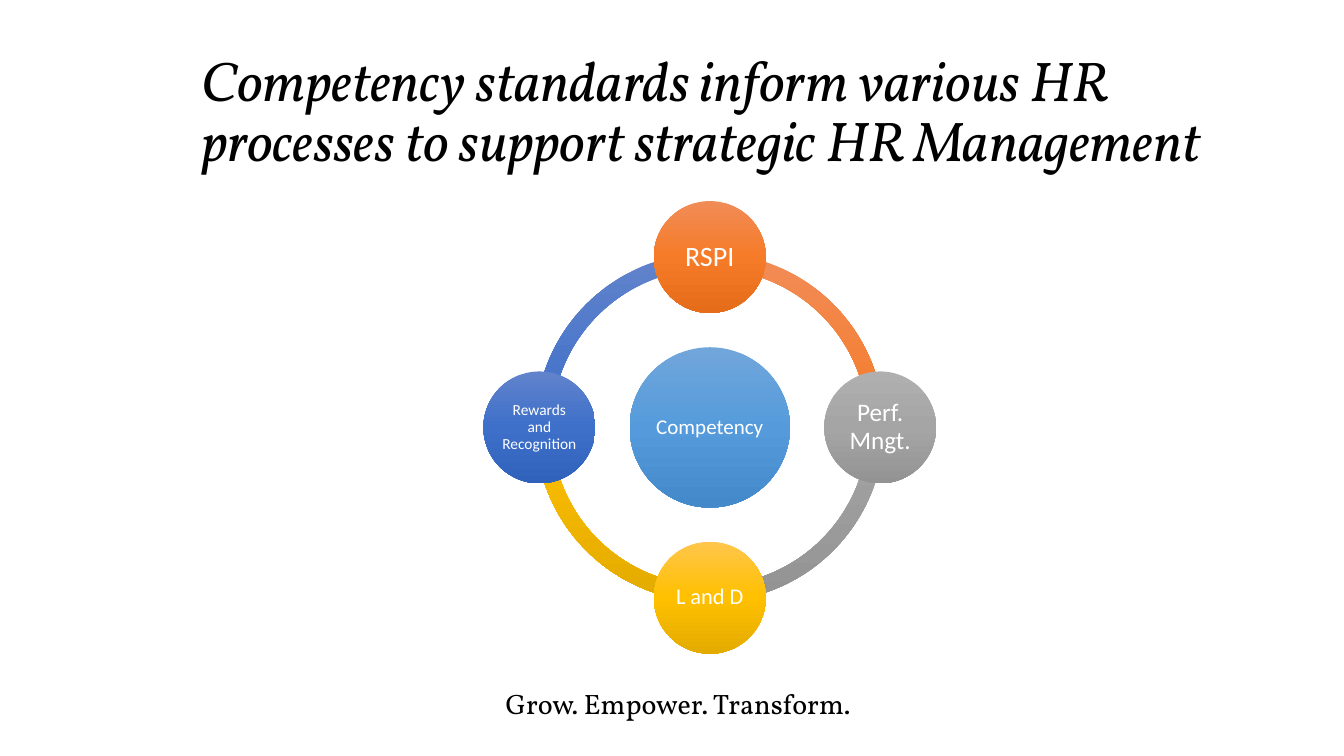
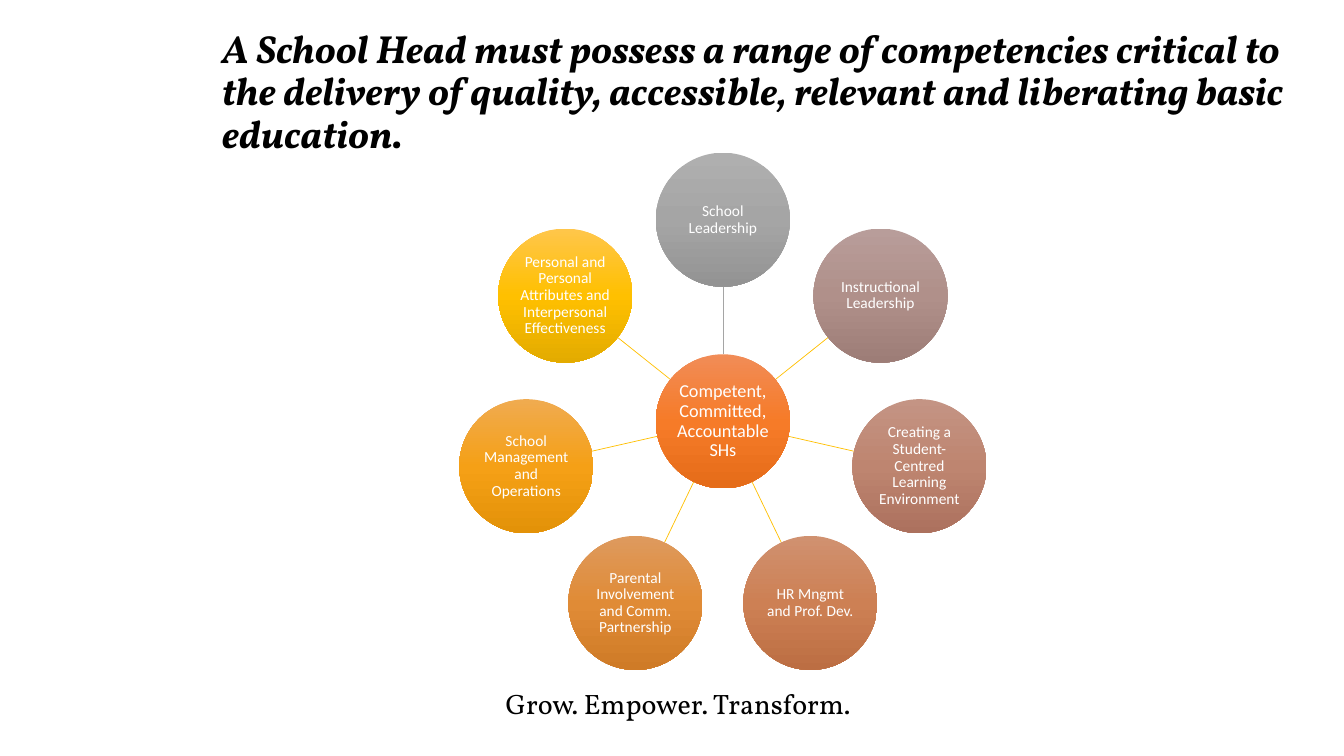
"""Build two slides on competency standards for HR processes and school heads."""
from copy import deepcopy
from dataclasses import dataclass
from math import cos, pi, sin

from pptx import Presentation
from pptx.dml.color import RGBColor
from pptx.enum.shapes import MSO_CONNECTOR, MSO_SHAPE
from pptx.enum.text import MSO_ANCHOR, MSO_AUTO_SIZE, PP_ALIGN
from pptx.oxml.ns import qn
from pptx.oxml.xmlchemy import OxmlElement
from pptx.util import Inches, Pt

OVAL, BLOCK_ARC = MSO_SHAPE.OVAL, MSO_SHAPE.BLOCK_ARC
STRAIGHT = MSO_CONNECTOR.STRAIGHT
LEFT, CENTER = PP_ALIGN.LEFT, PP_ALIGN.CENTER
MIDDLE = MSO_ANCHOR.MIDDLE
NO_AUTOFIT = MSO_AUTO_SIZE.NONE

TITLE_FONT, BODY_FONT = "Vollkorn", "Calibri"
BLACK = RGBColor(0x00, 0x00, 0x00)
WHITE = RGBColor(0xFF, 0xFF, 0xFF)
GREY_LINE = RGBColor(0xA5, 0xA5, 0xA5)
GOLD_LINE = RGBColor(0xFF, 0xC0, 0x00)

Shades = tuple[RGBColor, RGBColor, RGBColor]
LIGHT_BLUE = (RGBColor(0x71, 0xA6, 0xDB), RGBColor(0x55, 0x9B, 0xDB), RGBColor(0x44, 0x8A, 0xCA))
BLUE = (RGBColor(0x61, 0x83, 0xCB), RGBColor(0x3E, 0x70, 0xCA), RGBColor(0x30, 0x62, 0xBB))
ORANGE = (RGBColor(0xF1, 0x8C, 0x57), RGBColor(0xF6, 0x7B, 0x28), RGBColor(0xE5, 0x6C, 0x19))
GREY = (RGBColor(0xAF, 0xAF, 0xAF), RGBColor(0xA5, 0xA5, 0xA5), RGBColor(0x93, 0x93, 0x93))
GOLD = (RGBColor(0xFF, 0xC6, 0x4B), RGBColor(0xFF, 0xC0, 0x00), RGBColor(0xE3, 0xAB, 0x00))
MAUVE = (RGBColor(0xB8, 0x9D, 0x9A), RGBColor(0xB0, 0x90, 0x8A), RGBColor(0x9D, 0x7D, 0x77))
ROSE = (RGBColor(0xC4, 0x94, 0x84), RGBColor(0xBE, 0x85, 0x70), RGBColor(0xAC, 0x71, 0x5E))
COPPER = (RGBColor(0xD0, 0x91, 0x70), RGBColor(0xCD, 0x80, 0x54), RGBColor(0xBC, 0x6E, 0x43))
OCHRE = (RGBColor(0xDE, 0x9A, 0x5E), RGBColor(0xE0, 0x8B, 0x36), RGBColor(0xCF, 0x7B, 0x27))
AMBER = (RGBColor(0xF0, 0xAB, 0x50), RGBColor(0xF5, 0xA0, 0x16), RGBColor(0xE3, 0x92, 0x08))


@dataclass(frozen=True)
class Node:
    """A labelled circle."""
    text: str
    shades: Shades
    size: float = 11


@dataclass(frozen=True)
class Wheel:
    """Circles spaced evenly around a hub, clockwise from the top."""
    x: float
    y: float
    radius: float
    hub: Node
    hub_diameter: float
    nodes: tuple[Node, ...]
    node_diameter: float
    inset: float

    def point(self, index: int, distance: float) -> tuple[float, float]:
        """Return the point at a distance from the hub towards a node."""
        angle = 2 * pi * index / len(self.nodes)
        return self.x + distance * sin(angle), self.y - distance * cos(angle)


HR_WHEEL = Wheel(7.04, 4.24, 1.69, Node("Competency", LIGHT_BLUE, 15), 1.59, (
    Node("RSPI", ORANGE, 20),
    Node("Perf. Mngt.", GREY, 18),
    Node("L and D", GOLD, 16),
    Node("Rewards and Recognition", BLUE),
), 1.11, 0.02)
RING_DIAMETER, RING_THICKNESS = 3.46, 0.046

SCHOOL_WHEEL = Wheel(
    7.17, 4.18, 2, Node("Competent, Committed, Accountable SHs", ORANGE, 13), 1.33, (
        Node("School Leadership", GREY),
        Node("Instructional Leadership", MAUVE),
        Node("Creating a Student- Centred Learning Environment", ROSE),
        Node("HR Mngmt and Prof. Dev.", COPPER),
        Node("Parental Involvement and Comm. Partnership", OCHRE),
        Node("School Management and Operations", AMBER),
        Node("Personal and Personal Attributes and Interpersonal Effectiveness", GOLD),
    ), 1.33, 0.01)


def add_round(slide, kind, x: float, y: float, diameter: float, shades: Shades):
    """Add a round shape centred on a point, shaded from top to bottom."""
    sp = slide.shapes.add_shape(kind, Inches(x - diameter / 2), Inches(y - diameter / 2),
                                Inches(diameter), Inches(diameter))
    sp.shadow.inherit = False
    sp.line.fill.background()
    sp.fill.gradient()
    sp.fill.gradient_angle = 270
    stops = sp._element.spPr.find(".//" + qn("a:gsLst"))
    stops.append(deepcopy(stops[-1]))
    for stop, color, position in zip(sp.fill.gradient_stops, shades, (0, 0.5, 1)):
        stop.color.rgb = color
        stop.position = position
    return sp


def add_node(slide, node: Node, x: float, y: float, diameter: float, inset: float) -> None:
    """Add a circle with its label."""
    tf = add_round(slide, OVAL, x, y, diameter, node.shades).text_frame
    tf.word_wrap = True
    tf.vertical_anchor = MIDDLE
    tf.margin_left = tf.margin_right = tf.margin_top = tf.margin_bottom = Inches(inset)
    p = tf.paragraphs[0]
    p.text = node.text
    p.alignment = CENTER
    p.line_spacing = 0.9
    p.font.name, p.font.size, p.font.color.rgb = BODY_FONT, Pt(node.size), WHITE


def add_wheel(slide, wheel: Wheel) -> None:
    """Add the hub and the circles around it."""
    add_node(slide, wheel.hub, wheel.x, wheel.y, wheel.hub_diameter, wheel.inset)
    for i, node in enumerate(wheel.nodes):
        add_node(slide, node, *wheel.point(i, wheel.radius), wheel.node_diameter, wheel.inset)


def add_ring(slide, wheel: Wheel) -> None:
    """Add one arc from each node to the next."""
    step = 360 / len(wheel.nodes)
    for i, node in enumerate(wheel.nodes):
        arc = add_round(slide, BLOCK_ARC, wheel.x, wheel.y, RING_DIAMETER, node.shades)
        for k, angle in enumerate((i * step - 90, (i + 1) * step - 90)):
            arc.adjustments[k] = angle % 360 * 0.6
        arc.adjustments[2] = RING_THICKNESS


def add_spokes(slide, wheel: Wheel) -> None:
    """Add a line from the hub to each node."""
    for i in range(len(wheel.nodes)):
        start = wheel.point(i, wheel.hub_diameter / 2)
        end = wheel.point(i, wheel.radius - wheel.node_diameter / 2)
        line = slide.shapes.add_connector(STRAIGHT, *map(Inches, start + end))
        line.line.color.rgb = GOLD_LINE if i else GREY_LINE
        line.line.width = Pt(0.5)
        line._element.spPr.append(OxmlElement("a:effectLst"))


def set_title(slide, text: str, x: float, y: float, width: float, size: float,
              bold: bool = False) -> None:
    """Place and format the slide title."""
    title = slide.shapes.title
    title.left, title.top = Inches(x), Inches(y)
    title.width, title.height = Inches(width), Inches(1.45)
    tf = title.text_frame
    tf.text = text
    tf.word_wrap = True
    tf.auto_size = NO_AUTOFIT
    tf.vertical_anchor = MIDDLE
    p = tf.paragraphs[0]
    p.alignment = LEFT
    p.line_spacing = 0.9
    p.font.name, p.font.size, p.font.color.rgb = TITLE_FONT, Pt(size), BLACK
    p.font.italic, p.font.bold = True, bold


def add_tagline(layout, slide) -> None:
    """Put the tagline on the layout so that every slide shows it."""
    sp = slide.shapes.add_textbox(Inches(4.83), Inches(6.76), Inches(3.79), Inches(0.44))
    sp.text_frame.word_wrap = False
    p = sp.text_frame.paragraphs[0]
    p.text = "Grow. Empower. Transform."
    p.alignment = CENTER
    p.font.name, p.font.size, p.font.color.rgb = TITLE_FONT, Pt(20), BLACK
    layout.shapes._spTree.append(sp._element)


def main() -> None:
    """Build and save the presentation."""
    prs = Presentation()
    prs.slide_width, prs.slide_height = Inches(13.33), Inches(7.5)
    layout = prs.slide_layouts[5]

    s = prs.slides.add_slide(layout)
    add_tagline(layout, s)
    set_title(s, "Competency standards inform various HR processes to support "
                 "strategic HR Management", 1.9, 0.4, 10.95, 40)
    add_ring(s, HR_WHEEL)
    add_wheel(s, HR_WHEEL)

    s = prs.slides.add_slide(layout)
    set_title(s, "A School Head must possess a range of competencies critical to the "
                 "delivery of quality, accessible, relevant and liberating basic education.",
              2.1, 0.2, 10.78, 28, bold=True)
    add_spokes(s, SCHOOL_WHEEL)
    add_wheel(s, SCHOOL_WHEEL)

    prs.save("out.pptx")


if __name__ == "__main__":
    main()
